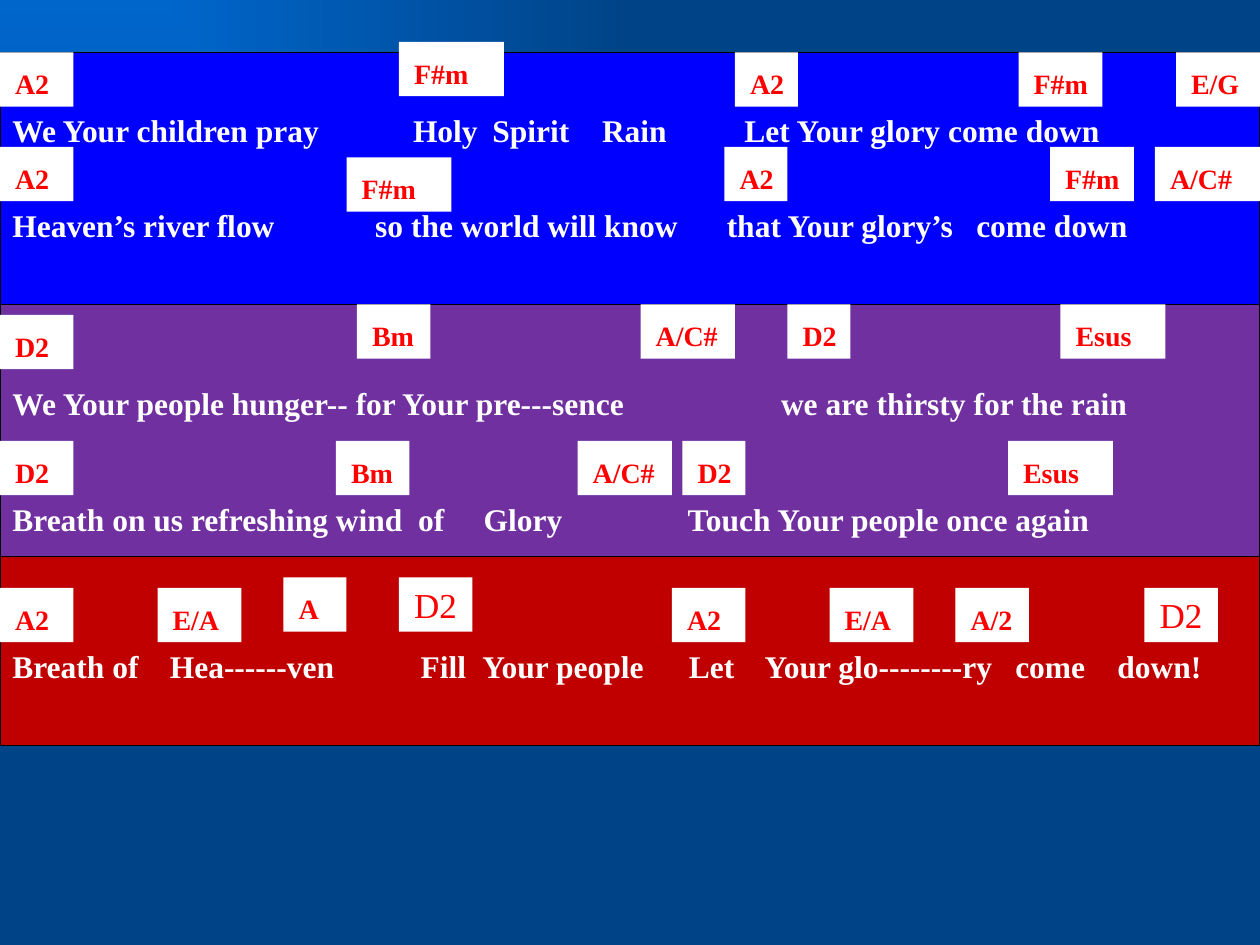
from pptx import Presentation
from pptx.dml.color import RGBColor
from pptx.enum.shapes import MSO_SHAPE
from pptx.enum.text import MSO_ANCHOR, PP_ALIGN
from pptx.oxml import parse_xml
from pptx.oxml.ns import nsdecls
from pptx.util import Inches, Pt

RECT = MSO_SHAPE.RECTANGLE
BOTTOM = MSO_ANCHOR.BOTTOM
LEFT = PP_ALIGN.LEFT
UNIT = 1 / 12
COLUMNS = 120
FONT = "Times New Roman"

LYRIC = {"size": Pt(18), "bold": True}
CHORD = {"size": Pt(16), "bold": True}
BIG_CHORD = {"size": Pt(20), "bold": False}

# Bands: top row, rows, colour
BANDS = [(29, 24, "7030A0"), (5, 24, "0000FF"), (53, 18, "C00000")]

# Lyrics: top row, columns, phrases, tab stops in inches
LYRICS = [
    (10, 115, ["We Your children pray", "Holy", "Spirit", "Rain", "Let Your glory come down"],
     [3.18, 3.81, 4.68, 5.81]),
    (19, 115, ["Heaven’s river flow", "so the world will know", "that Your glory’s", "come down"],
     [2.88, 5.67, 7.65]),
    (36, 116, ["We Your people hunger-- for Your pre---sence", "we are thirsty for the rain"],
     [6.1]),
    (47, 110, ["Breath on us refreshing wind", "of", "Glory", "Touch Your people once again"],
     [3.22, 3.74, 5.36]),
    (61, 120, ["Breath of", "Hea------ven", "Fill", "Your people", "Let", "Your glo--------ry",
                "come", "down!"],
     [1.25, 3.24, 3.73, 5.37, 5.97, 7.96, 8.77]),
]

# Chords by top row: name, left column, columns
CHORDS = {
    4: [("F#m", 38, 10)],
    5: [("A2", 0, 7), ("A2", 70, 6), ("F#m", 97, 8), ("E/G", 112, 8)],
    14: [("A2", 0, 7), ("A2", 69, 6), ("F#m", 100, 8), ("A/C#", 110, 10)],
    15: [("F#m", 33, 10)],
    29: [("Bm", 34, 7), ("A/C#", 61, 9), ("D2", 75, 6), ("Esus", 101, 10)],
    30: [("D2", 0, 7)],
    42: [("D2", 0, 7), ("Bm", 32, 7), ("A/C#", 55, 9), ("D2", 65, 6), ("Esus", 96, 10)],
    55: [("A", 27, 6)],
    56: [("A2", 0, 7), ("E/A", 15, 8), ("A2", 64, 7), ("E/A", 79, 8), ("A/2", 91, 7)],
}
BIG_CHORDS = {55: [("D2", 38, 7)], 56: [("D2", 109, 7)]}


def rgb(value):
    """Turn a hex string into a colour."""
    return RGBColor.from_string(value)


def grid(count):
    """Turn a number of grid units into a length."""
    return Inches(count * UNIT)


def add_background(s):
    """Fill the slide with a gradient that starts at the top left corner."""
    fill = s.background.fill
    fill.gradient()
    for stop, value in zip(fill.gradient_stops, ("0066CC", "004488")):
        stop.color.rgb = rgb(value)
    lin = s._element.xpath(".//a:gradFill/a:lin")[0]
    lin.getparent().replace(lin, parse_xml(
        f'<a:path {nsdecls("a")} path="rect"><a:fillToRect r="100000" b="100000"/></a:path>'))


def add_box(s, left, top, width, height, fill):
    """Add a plain filled rectangle."""
    sp = s.shapes.add_shape(RECT, left, top, width, height)
    sp.shadow.inherit = False
    sp.fill.solid()
    sp.fill.fore_color.rgb = rgb(fill)
    sp.line.fill.background()
    return sp


def write(sp, text, color, font, inset):
    """Write one line on the bottom of a shape and return its paragraph."""
    tf = sp.text_frame
    frame = {"word_wrap": True, "vertical_anchor": BOTTOM, "margin_left": Inches(inset),
             "margin_right": 0, "margin_top": 0, "margin_bottom": Inches(0.05)}
    for name, value in frame.items():
        setattr(tf, name, value)
    p = tf.paragraphs[0]
    p.alignment = LEFT
    r = p.add_run()
    r.text = text
    r.font.name = FONT
    r.font.color.rgb = rgb(color)
    for name, value in font.items():
        setattr(r.font, name, value)
    return p


def add_band(s, row, rows, fill):
    """Add an outlined band across the slide."""
    sp = add_box(s, 0, grid(row), grid(COLUMNS), grid(rows), fill)
    sp.line.color.rgb = rgb("000000")
    sp.line.width = Pt(0.75)


def add_lyric(s, row, columns, phrases, stops):
    """Add a line of lyrics with its phrases set on tab stops."""
    sp = s.shapes.add_textbox(0, grid(row), grid(columns), Inches(0.4))
    p = write(sp, "\t".join(phrases), "FFFFFF", LYRIC, 0.1)
    tabs = "".join(f'<a:tab pos="{Inches(x)}" algn="l"/>' for x in stops)
    p._p.get_or_add_pPr().append(parse_xml(f'<a:tabLst {nsdecls("a")}>{tabs}</a:tabLst>'))


def add_chords(s, chords, font):
    """Add white chord labels row by row."""
    for row, labels in chords.items():
        for name, column, columns in labels:
            sp = add_box(s, grid(column), grid(row), grid(columns), Inches(0.43), "FFFFFF")
            write(sp, name, "FF0000", font, 0.12)


def main():
    """Build the song sheet and save it."""
    prs = Presentation()
    prs.slide_width, prs.slide_height = Inches(10), Inches(7.5)
    s = prs.slides.add_slide(prs.slide_layouts[6])
    add_background(s)
    for band in BANDS:
        add_band(s, *band)
    for lyric in LYRICS:
        add_lyric(s, *lyric)
    add_chords(s, CHORDS, CHORD)
    add_chords(s, BIG_CHORDS, BIG_CHORD)
    prs.save("out.pptx")


if __name__ == "__main__":
    main()
